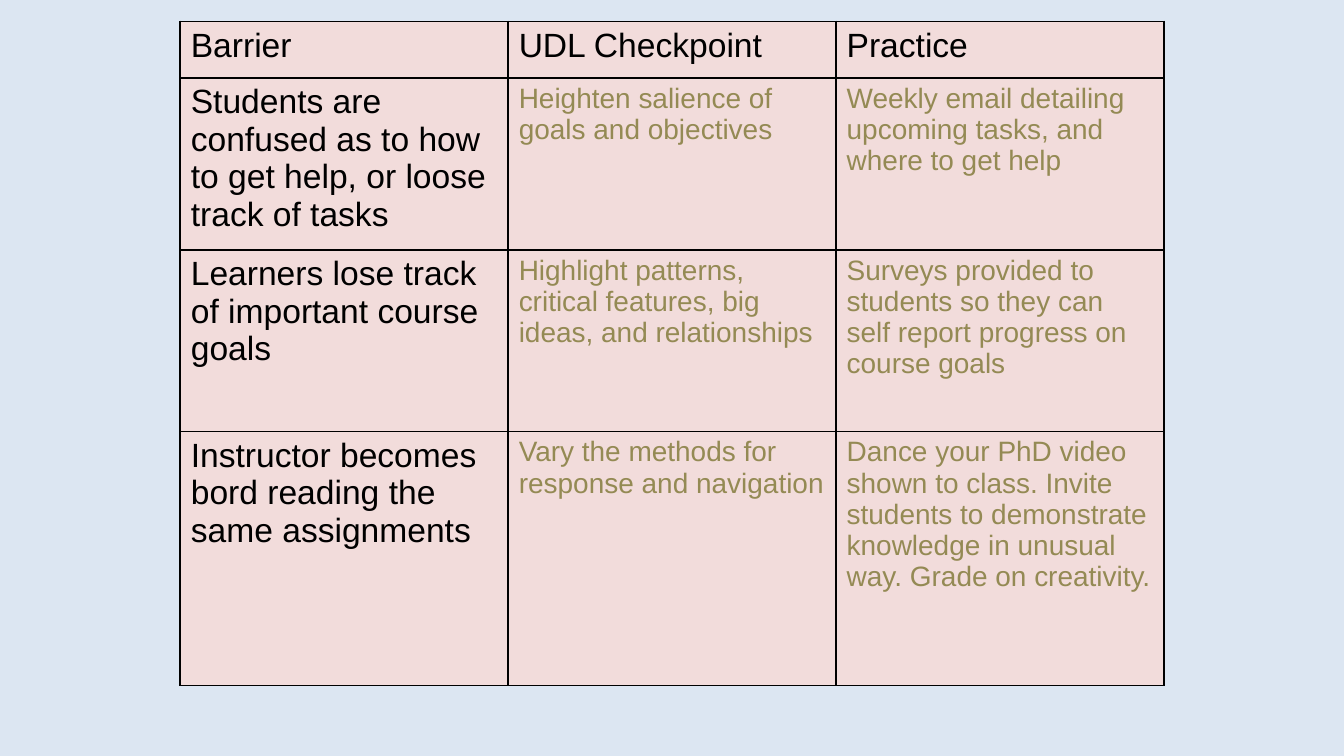
from lxml.etree import SubElement
from pptx import Presentation
from pptx.dml.color import RGBColor
from pptx.oxml.ns import qn
from pptx.util import Inches, Pt

COLORS = {"back": "DCE6F2", "cell": "F2DCDB", "dark": "000000", "olive": "948A54"}
ROWS = [
    ("Barrier", "UDL Checkpoint", "Practice"),
    ("Students are confused as to how to get help, or loose track of tasks",
     "Heighten salience of goals and objectives",
     "Weekly email detailing upcoming tasks, and where to get help"),
    ("Learners lose track of important course goals",
     "Highlight patterns, critical features, big ideas, and relationships",
     "Surveys provided to students so they can self report progress on course goals"),
    ("Instructor becomes bord reading the same assignments",
     "Vary the methods for response and navigation",
     "Dance your PhD video shown to class. Invite students to demonstrate "
     "knowledge in unusual way. Grade on creativity."),
]
HEIGHTS = [0.42, 1.28, 1.35, 1.89]


def color(name):
    return RGBColor.from_string(COLORS[name])


def border(cell):
    props = cell._tc.get_or_add_tcPr()
    for side in ("lnL", "lnR", "lnT", "lnB"):
        line = SubElement(props, qn(f"a:{side}"), w=str(Pt(1)))
        fill = SubElement(line, qn("a:solidFill"))
        SubElement(fill, qn("a:srgbClr"), val=COLORS["dark"])


# Slide (16:9) and background
prs = Presentation()
prs.slide_width = Inches(10)
prs.slide_height = Inches(10 * 9 / 16)
slide = prs.slides.add_slide(prs.slide_layouts[6])
slide.background.fill.solid()
slide.background.fill.fore_color.rgb = color("back")

# Table grid
frame = slide.shapes.add_table(len(ROWS), 3, Inches(1.34), Inches(0.16),
                               Inches(7.32), Inches(sum(HEIGHTS)))
table = frame.table
table.first_row = table.horz_banding = False
for col in table.columns:
    col.width = Inches(2.44)
for row, height in zip(table.rows, HEIGHTS):
    row.height = Inches(height)

# Cells: header row and first column are larger and dark
for r, texts in enumerate(ROWS):
    for c, text in enumerate(texts):
        cell = table.cell(r, c)
        border(cell)
        cell.fill.solid()
        cell.fill.fore_color.rgb = color("cell")
        cell.margin_left = cell.margin_right = Inches(0.08)
        cell.margin_top = cell.margin_bottom = Inches(0.04)
        cell.text_frame.text = text
        head = r == 0 or c == 0
        font = cell.text_frame.paragraphs[0].runs[0].font
        font.name = "Arial"
        font.size = Pt(18 if head else 15)
        font.color.rgb = color("dark" if head else "olive")

prs.save("out.pptx")
